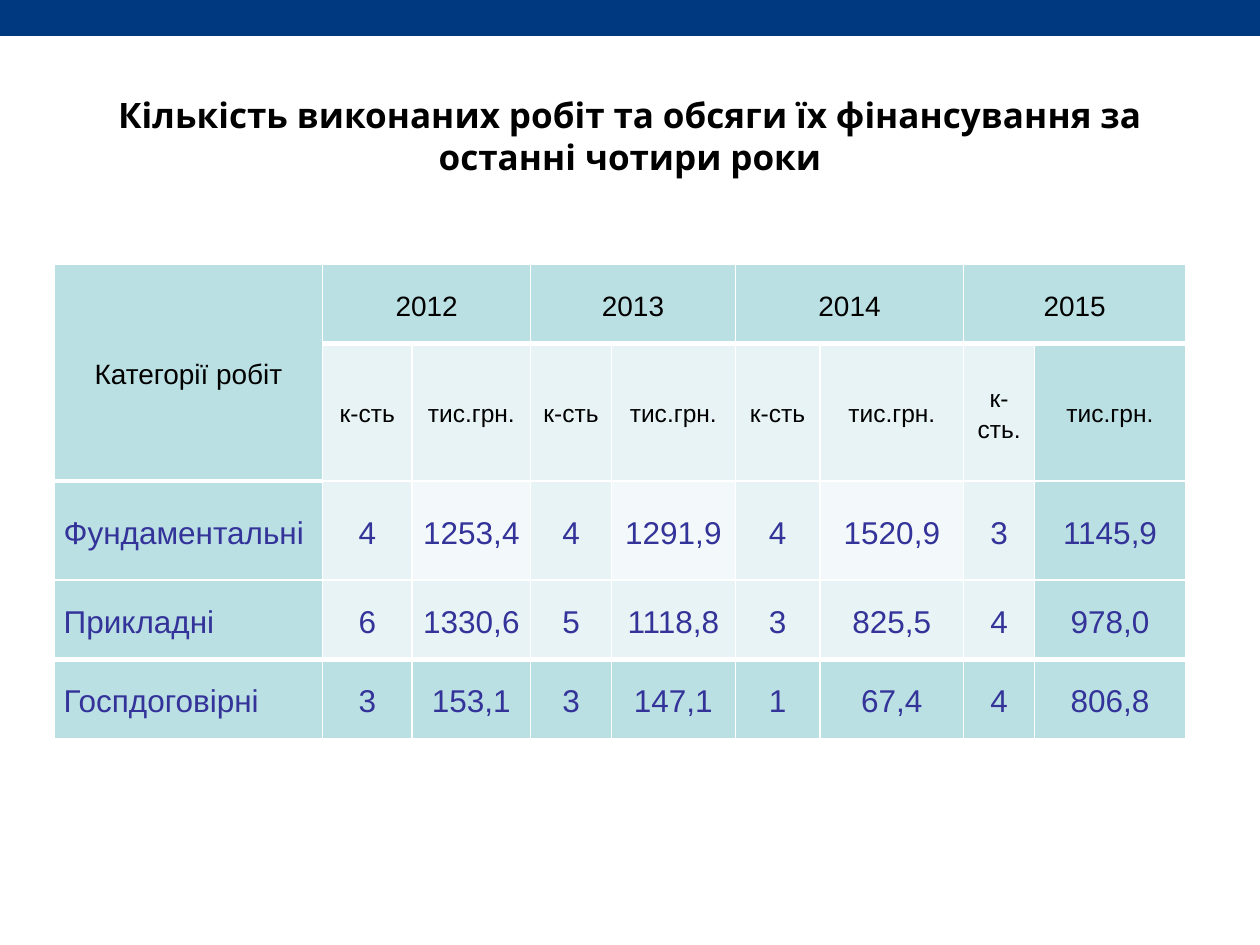
import pptx
import pptx.util
import pptx.dml.color
import pptx.enum.shapes
import pptx.enum.text
import pptx.oxml
import pptx.oxml.ns
from dataclasses import dataclass

Pt = pptx.util.Pt
Align = pptx.enum.text.PP_ALIGN
Anchor = pptx.enum.text.MSO_ANCHOR


@dataclass(frozen=True)
class Theme:
    navy: str = "003980"
    white: str = "FFFFFF"
    black: str = "000000"
    ink: str = "333399"
    teal: str = "BBE0E3"
    pale: str = "E7F3F4"
    faint: str = "F3F9FA"
    head: str = "Karla"
    body: str = "Arial"
    title: int = 20
    year: int = 16
    unit: int = 14
    data: int = 18
    thin: int = 1
    thick: int = 3


theme = Theme()
TITLE = "Кількість виконаних робіт та обсяги їх фінансування за останні чотири роки"
YEARS = ["2012", "2013", "2014", "2015"]
COUNT, SUM = "к-сть", "тис.грн."
ROWS = [
    ["Категорії робіт"] + [text for year in YEARS for text in (year, "")],
    [""] + [COUNT, SUM] * 3 + [COUNT + ".", SUM],
    ["Фундаментальні", "4", "1253,4", "4", "1291,9", "4", "1520,9", "3", "1145,9"],
    ["Прикладні", "6", "1330,6", "5", "1118,8", "3", "825,5", "4", "978,0"],
    ["Госпдоговірні", "3", "153,1", "3", "147,1", "1", "67,4", "4", "806,8"],
]
WIDTHS = [153.4, 51, 67.9, 46.1, 70.8, 48.4, 82.2, 40.4, 86.4]
HEIGHTS = [45.2, 78.4, 56.8, 45.2, 45.2]


def color(code):
    return pptx.dml.color.RGBColor.from_string(code)


def style(para, name, size, code, bold=False, align=Align.CENTER):
    para.alignment = align
    font = para.font
    font.name, font.size, font.bold = name, Pt(size), bold
    font.color.rgb = color(code)


def add_band(slide, box):
    band = slide.shapes.add_shape(
        pptx.enum.shapes.MSO_SHAPE.RECTANGLE, *map(Pt, box))
    band.shadow.inherit = False
    band.fill.solid()
    band.fill.fore_color.rgb = color(theme.navy)
    band.line.color.rgb = color(theme.navy)
    band.line.width = Pt(0.75)


def add_title(slide, box):
    frame = slide.shapes.add_textbox(*map(Pt, box)).text_frame
    frame.word_wrap = True
    frame.vertical_anchor = Anchor.MIDDLE
    frame.margin_bottom = Pt(27.6)
    para = frame.paragraphs[0]
    para.text = TITLE
    style(para, theme.head, theme.title, theme.black, bold=True)


def is_thick(row, col):
    return row in (0, 3) or (row, col) == (1, 0)


def add_edges(cell, top, bottom):
    props = cell._tc.get_or_add_tcPr()
    space = pptx.oxml.ns.nsdecls("a")
    widths = {"lnL": theme.thin, "lnR": theme.thin, "lnT": top, "lnB": bottom}
    for tag, width in widths.items():
        props.append(pptx.oxml.parse_xml(
            f'<a:{tag} {space} w="{Pt(width)}"><a:solidFill>'
            f'<a:srgbClr val="{theme.white}"/></a:solidFill></a:{tag}>'))


def pick_fill(row, col):
    if row in (0, 4) or col in (0, 8):
        return theme.teal
    return theme.faint if row == 2 and col % 2 == 0 else theme.pale


def fill_cell(cell, text, row, col):
    cell.margin_left = cell.margin_right = Pt(5.4)
    cell.margin_top = cell.margin_bottom = 0
    cell.vertical_anchor = Anchor.MIDDLE
    top, bottom = (theme.thick if is_thick(line, col) else theme.thin
                   for line in (row - 1, row))
    add_edges(cell, top, bottom)
    cell.fill.solid()
    cell.fill.fore_color.rgb = color(pick_fill(row, col))
    para = cell.text_frame.paragraphs[0]
    para.text = text
    para.line_spacing = 1.15
    size = [theme.year, theme.unit][row] if row < 2 else theme.data
    code = theme.black if row < 2 else theme.ink
    align = Align.LEFT if row > 1 and col == 0 else Align.CENTER
    style(para, theme.body, size, code, align=align)


def add_grid(slide, box):
    table = slide.shapes.add_table(
        len(ROWS), len(WIDTHS), *map(Pt, box)).table
    table.first_row = table.horz_banding = False
    for col, width in zip(table.columns, WIDTHS):
        col.width = Pt(width)
    for row, height in zip(table.rows, HEIGHTS):
        row.height = Pt(height)
    for row, texts in enumerate(ROWS):
        for col, text in enumerate(texts):
            fill_cell(table.cell(row, col), text, row, col)
    table.cell(0, 0).merge(table.cell(1, 0))
    for col in range(1, len(WIDTHS), 2):
        table.cell(0, col).merge(table.cell(0, col + 1))


def main():
    deck = pptx.Presentation()
    deck.slide_width, deck.slide_height = Pt(720), Pt(540)
    slide = deck.slides.add_slide(deck.slide_layouts[6])
    add_band(slide, (0, 0, 720, 20.2))
    add_title(slide, (54, 31.7, 612, 115.9))
    add_grid(slide, (31, 151.2, sum(WIDTHS), sum(HEIGHTS)))
    deck.save("out.pptx")


if __name__ == "__main__":
    main()
